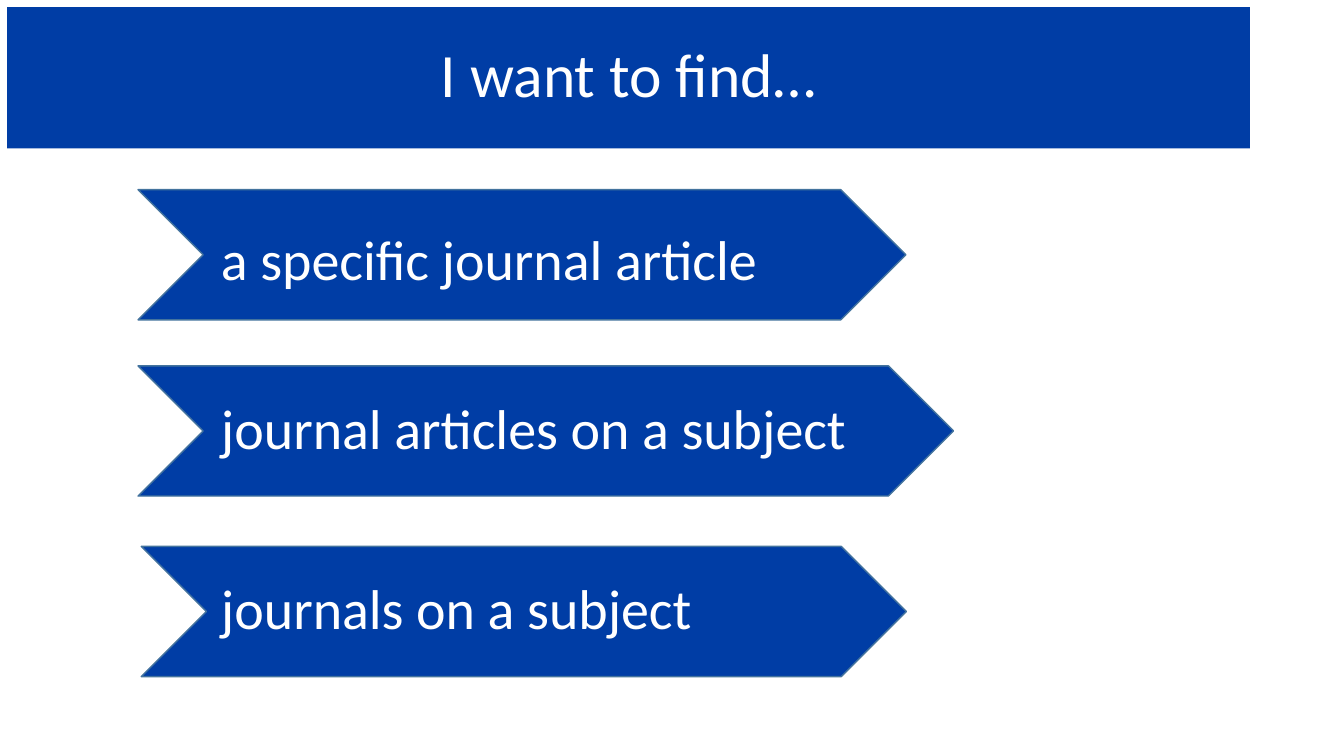
"""Build a slide listing three kinds of journal search as chevrons."""
from pptx import Presentation
from pptx.dml.color import RGBColor
from pptx.enum.shapes import MSO_SHAPE
from pptx.enum.text import MSO_ANCHOR, MSO_AUTO_SIZE, PP_ALIGN
from pptx.util import Cm, Pt

CHEVRON = MSO_SHAPE.CHEVRON
MIDDLE = MSO_ANCHOR.MIDDLE
NO_AUTOFIT = MSO_AUTO_SIZE.NONE
CENTER, LEFT = PP_ALIGN.CENTER, PP_ALIGN.LEFT
COLORS = {"blue": "003DA5", "outline": "43739E", "white": "FFFFFF"}


def color(name):
    return RGBColor.from_string(COLORS[name])


def write_text(shape, text, size, alignment):
    frame = shape.text_frame
    frame.word_wrap = True
    frame.auto_size = NO_AUTOFIT
    frame.vertical_anchor = MIDDLE
    frame.text = text
    paragraph = frame.paragraphs[0]
    paragraph.alignment = alignment
    paragraph.line_spacing = 0.9
    paragraph.font.name = "Calibri"
    paragraph.font.size = Pt(size)
    paragraph.font.color.rgb = color("white")


presentation = Presentation()
presentation.slide_width = Cm(33.87)
presentation.slide_height = Cm(19.05)
slide = presentation.slides.add_slide(presentation.slide_layouts[5])

title = slide.shapes.title
title.left, title.top, title.width, title.height = Cm(0.18), Cm(0.18), Cm(31.32), Cm(3.56)
title.fill.solid()
title.fill.fore_color.rgb = color("blue")
write_text(title, "I want to find…", 44, CENTER)

searches = [
    ("a specific journal article", 3.48, 4.78, 19.35, 5.72, 18.11),
    ("journal articles on a subject", 3.48, 9.22, 20.55, 9.96, 19.94),
    ("journals on a subject", 3.56, 13.77, 19.28, 14.5, 16.48),
]
for text, left, top, width, label_top, label_width in searches:
    chevron = slide.shapes.add_shape(CHEVRON, Cm(left), Cm(top), Cm(width), Cm(3.28))
    chevron.shadow.inherit = False
    chevron.fill.solid()
    chevron.fill.fore_color.rgb = color("blue")
    chevron.line.color.rgb = color("outline")
    chevron.line.width = Pt(1)

    label = slide.shapes.add_textbox(Cm(5), Cm(label_top), Cm(label_width), Cm(1.8))
    label.text_frame.margin_left = Cm(0.57)
    write_text(label, text, 40, LEFT)

presentation.save("out.pptx")
